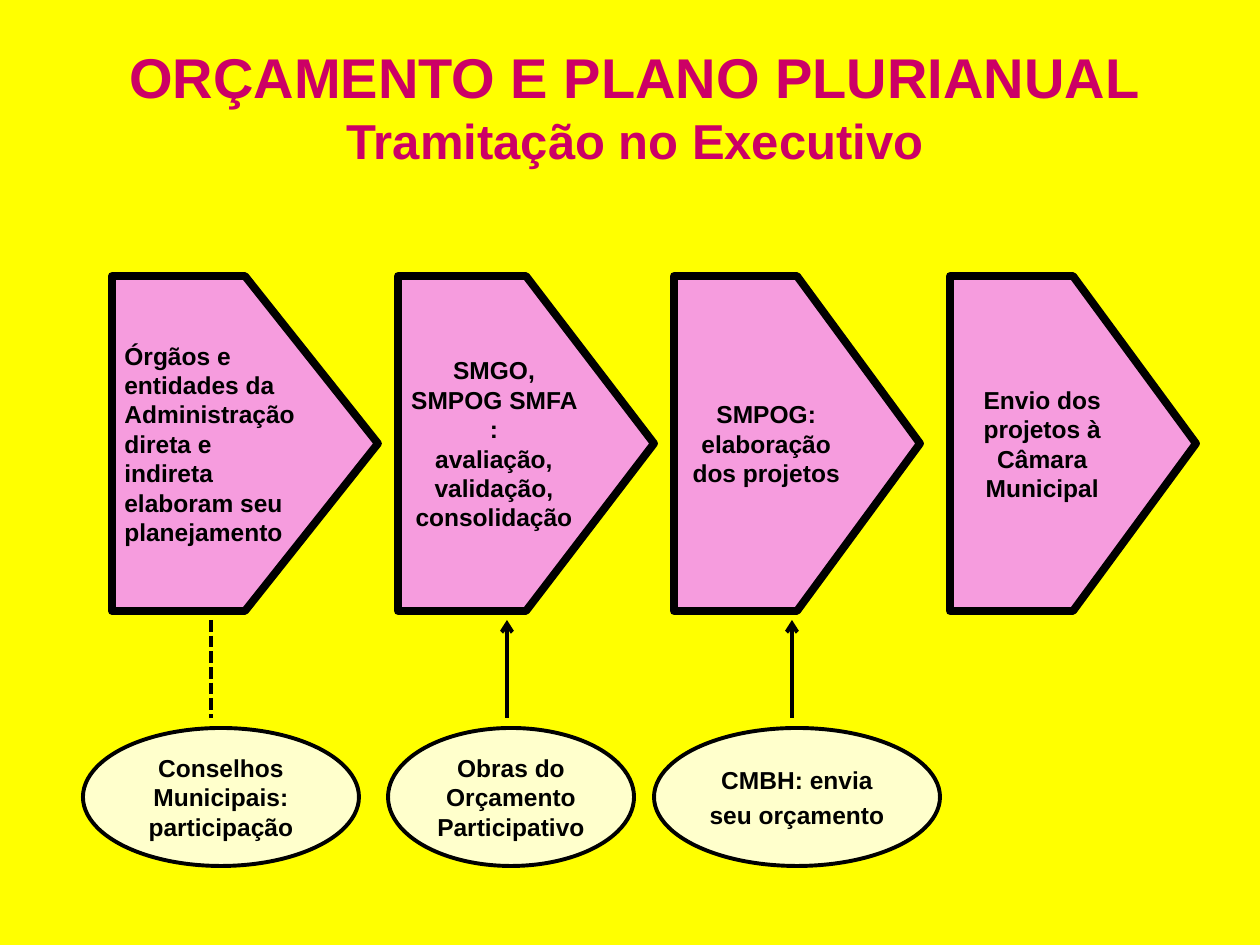
import pptx
import pptx.util
import pptx.dml.color
import pptx.enum.dml
import pptx.enum.shapes
import pptx.enum.text
import pptx.oxml
import pptx.oxml.ns

PX = 914400 / 126
COLORS = {"background": "FFFF00", "title": "CC0066", "step": "F69CDE",
          "input": "FFFFCC", "ink": "000000"}
SHAPE = pptx.enum.shapes.MSO_SHAPE
ALIGN = pptx.enum.text.PP_ALIGN
STEP_TOP, STEP_HEIGHT = 276, 335
INPUT_TOP, INPUT_HEIGHT = 728, 138
LINK_TOP, LINK_BOTTOM = 620, 718

STEPS = [  # left, width, text, alignment
    (112, 266, "Órgãos e entidades da Administração direta e indireta "
               "elaboram seu planejamento", ALIGN.LEFT),
    (398, 256, "SMGO, SMPOG SMFA :\navaliação, validação, consolidação", ALIGN.CENTER),
    (674, 246, "SMPOG: elaboração dos projetos", ALIGN.CENTER),
    (950, 246, "Envio dos projetos à Câmara\nMunicipal", ALIGN.CENTER),
]
INPUTS = [  # left, width, text, space before in points
    (83, 276, "Conselhos Municipais: participação", 0),
    (388, 246, "Obras do Orçamento Participativo", 0),
    (654, 286, "CMBH: envia\nseu orçamento", 3.2),
]


def px(*lengths):
    return [pptx.util.Emu(round(n * PX)) for n in lengths]


def rgb(name):
    return pptx.dml.color.RGBColor.from_string(COLORS[name])


def write_text(s, text, sizes, color, align=ALIGN.CENTER, space_before=0):
    """Fill a shape with bold text; sizes are used run by run, the last one repeating."""
    tf = s.text_frame
    tf.word_wrap = True
    tf.vertical_anchor = pptx.enum.text.MSO_ANCHOR.MIDDLE
    tf.text = text
    for p in tf.paragraphs:
        p.alignment = align
        p.space_before = pptx.util.Pt(space_before)
        for i, r in enumerate(p.runs):
            r.font.name = "Arial"
            r.font.bold = True
            r.font.size = pptx.util.Pt(sizes[min(i, len(sizes) - 1)])
            r.font.color.rgb = rgb(color)


def set_line(s, width):
    s.line.color.rgb = rgb("ink")
    s.line.width = pptx.util.Pt(width)


def add_title(slide):
    s = slide.shapes.add_textbox(*px(68, 37, 1134, 138))
    write_text(s, "ORÇAMENTO E PLANO PLURIANUAL\vTramitação no Executivo", [32, 28], "title")


def add_box(slide, kind, box, fill, line_width, text, **text_format):
    s = slide.shapes.add_shape(kind, *px(*box))
    s.shadow.inherit = False
    s.fill.solid()
    s.fill.fore_color.rgb = rgb(fill)
    set_line(s, line_width)
    write_text(s, text, [14], "ink", **text_format)


def add_link(slide, x, arrow=True):
    """Link an input up to its step, as an arrow or as a dashed line."""
    ends = (LINK_BOTTOM, LINK_TOP) if arrow else (LINK_TOP, LINK_BOTTOM)
    s = slide.shapes.add_connector(pptx.enum.shapes.MSO_CONNECTOR.STRAIGHT,
                                   *px(x, ends[0], x, ends[1]))
    set_line(s, 2.25)
    if arrow:
        tail = pptx.oxml.parse_xml(
            f'<a:tailEnd {pptx.oxml.ns.nsdecls("a")} type="arrow"/>')
        s.line._get_or_add_ln().append(tail)
    else:
        s.line.dash_style = pptx.enum.dml.MSO_LINE.SQUARE_DOT
    s._element.spPr.append(
        pptx.oxml.parse_xml(f'<a:effectLst {pptx.oxml.ns.nsdecls("a")}/>'))


def main():
    prs = pptx.Presentation()
    prs.slide_width, prs.slide_height = px(1260, 945)
    slide = prs.slides.add_slide(prs.slide_layouts[6])
    slide.background.fill.solid()
    slide.background.fill.fore_color.rgb = rgb("background")

    add_title(slide)
    for left, width, text, align in STEPS:
        add_box(slide, SHAPE.PENTAGON, (left, STEP_TOP, width, STEP_HEIGHT),
                "step", 4.5, text, align=align)
    for left, width, text, space in INPUTS:
        add_box(slide, SHAPE.OVAL, (left, INPUT_TOP, width, INPUT_HEIGHT),
                "input", 2.25, text, space_before=space)
    add_link(slide, 211, arrow=False)
    add_link(slide, 507)
    add_link(slide, 792)
    prs.save("out.pptx")


if __name__ == "__main__":
    main()
